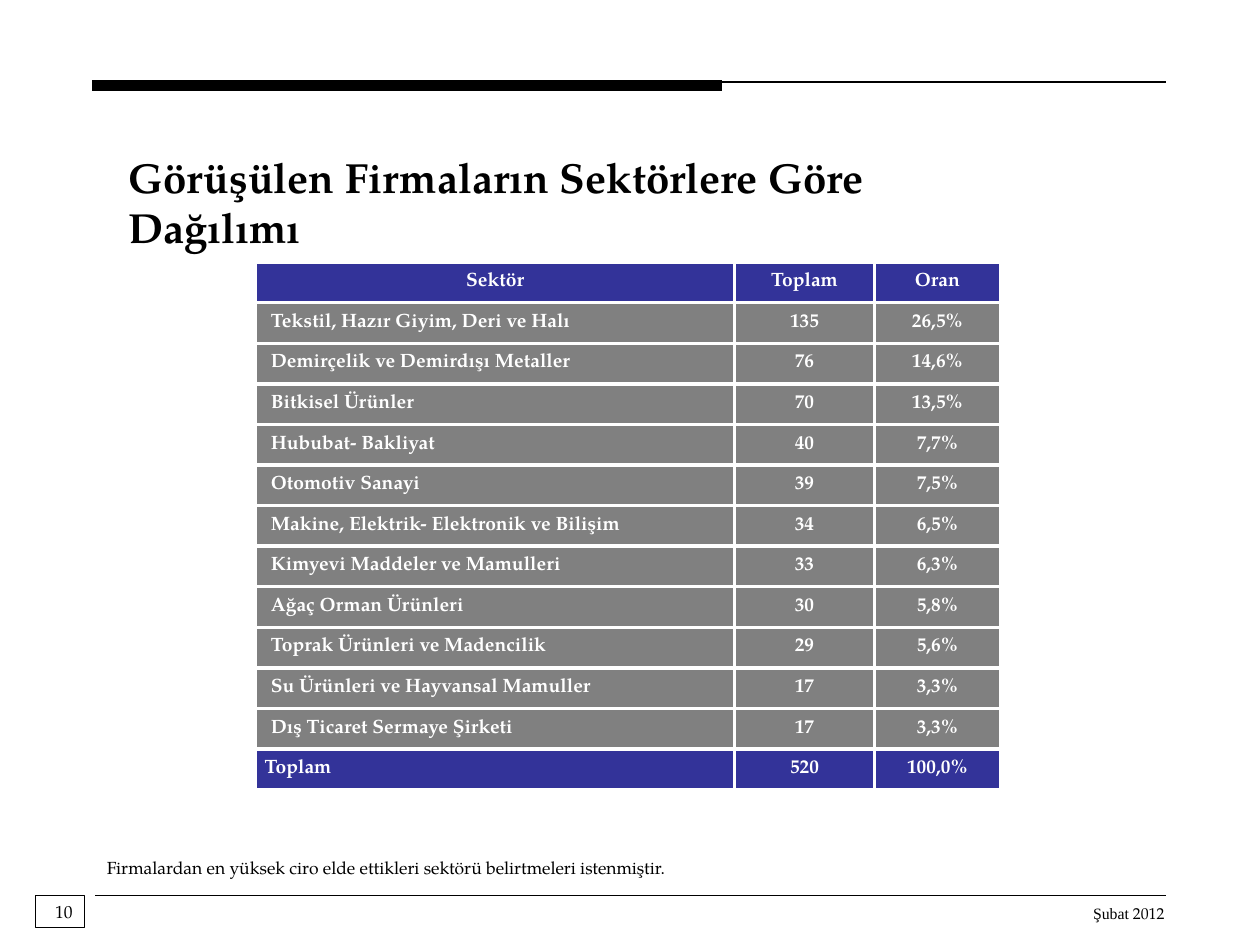
from dataclasses import dataclass

from lxml.etree import SubElement
from pptx import Presentation
from pptx.dml.color import RGBColor
from pptx.enum.shapes import MSO_CONNECTOR, MSO_SHAPE
from pptx.enum.text import MSO_ANCHOR, PP_ALIGN
from pptx.oxml.ns import qn
from pptx.util import Inches, Pt

SERIF = "TeX Gyre Pagella"
BLACK, WHITE, NAVY, GRAY = "000000", "FFFFFF", "333399", "808080"
GRID = 0.1
COLUMN_WIDTHS = (38, 11.1, 10)
TABLE_HEIGHT = 41.9
HEADER = ("Sektör", "Toplam", "Oran")
SECTORS = (
    ("Tekstil, Hazır Giyim, Deri ve Halı", "135", "26,5%"),
    ("Demirçelik ve Demirdışı Metaller", "76", "14,6%"),
    ("Bitkisel Ürünler", "70", "13,5%"),
    ("Hububat- Bakliyat", "40", "7,7%"),
    ("Otomotiv Sanayi", "39", "7,5%"),
    ("Makine, Elektrik- Elektronik ve Bilişim", "34", "6,5%"),
    ("Kimyevi Maddeler ve Mamulleri", "33", "6,3%"),
    ("Ağaç Orman Ürünleri", "30", "5,8%"),
    ("Toprak Ürünleri ve Madencilik", "29", "5,6%"),
    ("Su Ürünleri ve Hayvansal Mamuller", "17", "3,3%"),
    ("Dış Ticaret Sermaye Şirketi", "17", "3,3%"),
)
TOTAL = ("Toplam", "520", "100,0%")


@dataclass(frozen=True)
class Rule:
    """A horizontal line between two grid columns."""
    start: float
    end: float
    row: float
    weight: float


@dataclass(frozen=True)
class Caption:
    """A text with its place on the grid."""
    words: str
    column: float
    row: float
    columns: float
    rows: float
    size: float
    bold: bool = False
    wrap: bool = True
    align: PP_ALIGN = PP_ALIGN.LEFT


@dataclass(frozen=True)
class Band:
    """A table row with its fill, first column indent and alignment."""
    values: tuple
    fill: str
    indent: float = 0
    align: PP_ALIGN = PP_ALIGN.LEFT


RULES = (
    Rule(92.5, 7.5, 71.1, 0.75),
    Rule(57.3, 7.3, 6.8, 6),
    Rule(92.5, 7.5, 6.5, 0.75),
)
PAGE_NUMBER = Caption("10", 3.4, 71, 25, 4, 10)
TITLE = Caption("Görüşülen Firmaların Sektörlere Göre Dağılımı", 9.2, 11.5, 74, 9, 24, bold=True)
NOTE = Caption("Firmalardan en yüksek ciro elde ettikleri sektörü belirtmeleri istenmiştir.",
               7.5, 67.5, 46.9, 2.7, 10, wrap=False)
DATE = Caption("Şubat 2012", 85.7, 71.2, 7.7, 2.5, 9, wrap=False, align=PP_ALIGN.RIGHT)


def grid(*steps: float) -> list:
    """Turn grid steps into lengths."""
    return [Inches(step * GRID) for step in steps]


def color(code: str) -> RGBColor:
    """Turn a hex string into a colour."""
    return RGBColor.from_string(code)


def style(run, size: float, code: str, bold: bool, face: str = SERIF) -> None:
    """Format one run."""
    run.font.name, run.font.size, run.font.bold = face, Pt(size), bold
    run.font.color.rgb = color(code)


def draw_rule(slide, rule: Rule) -> None:
    """Draw a horizontal line without shadow."""
    line = slide.shapes.add_connector(
        MSO_CONNECTOR.STRAIGHT, *grid(rule.start, rule.row, rule.end, rule.row))
    line.line.color.rgb = color(BLACK)
    line.line.width = Pt(rule.weight)
    SubElement(line._element.spPr, qn("a:effectLst"))


def draw_caption(slide, caption: Caption):
    """Draw a text box and return its paragraph."""
    box = slide.shapes.add_textbox(
        *grid(caption.column, caption.row, caption.columns, caption.rows))
    box.text_frame.word_wrap = caption.wrap
    paragraph = box.text_frame.paragraphs[0]
    paragraph.text = caption.words
    paragraph.alignment = caption.align
    style(paragraph.runs[0], caption.size, BLACK, caption.bold)
    return paragraph


def draw_date(slide) -> None:
    """Draw the date with its month in a second typeface."""
    paragraph = draw_caption(slide, DATE)
    month, year = DATE.words.split()
    paragraph.runs[0].text = f"{month} "
    style(paragraph.runs[0], DATE.size, BLACK, False, "Times New Roman")
    year_run = paragraph.add_run()
    year_run.text = year
    style(year_run, DATE.size, BLACK, False)


def draw_page_frame(slide) -> None:
    """Draw the frame around the page number."""
    frame = slide.shapes.add_shape(MSO_SHAPE.RECTANGLE, *grid(2.8, 71.1, 3.9, 2.5))
    frame.shadow.inherit = False
    frame.fill.background()
    frame.line.color.rgb = color(BLACK)
    frame.line.width = Pt(0.75)


def add_borders(cell) -> None:
    """Give a cell white borders on all sides."""
    properties = cell._tc.get_or_add_tcPr()
    for place, side in enumerate(("a:lnL", "a:lnR", "a:lnT", "a:lnB")):
        border = SubElement(properties, qn(side), w=str(Pt(2.25)))
        SubElement(SubElement(border, qn("a:solidFill")), qn("a:srgbClr"), val=WHITE)
        properties.insert(place, border)


def fill_cell(cell, value: str, fill: str, indent: float, align: PP_ALIGN) -> None:
    """Write and format one table cell."""
    cell.fill.solid()
    cell.fill.fore_color.rgb = color(fill)
    add_borders(cell)
    cell.vertical_anchor = MSO_ANCHOR.MIDDLE
    cell.margin_left = Inches(indent)
    cell.margin_right = cell.margin_top = cell.margin_bottom = 0
    paragraph = cell.text_frame.paragraphs[0]
    paragraph.text = value
    paragraph.alignment = align
    style(paragraph.runs[0], 11, WHITE, True)


def draw_sector_table(slide) -> None:
    """Draw the sector table."""
    bands = [Band(HEADER, NAVY, align=PP_ALIGN.CENTER),
             *(Band(sector, GRAY, 0.12) for sector in SECTORS),
             Band(TOTAL, NAVY, 0.07)]
    table = slide.shapes.add_table(
        len(bands), len(HEADER), *grid(20.3, 20.8, sum(COLUMN_WIDTHS), TABLE_HEIGHT)).table
    table.first_row = table.horz_banding = False
    for column, width in zip(table.columns, grid(*COLUMN_WIDTHS)):
        column.width = width
    for row, band in zip(table.rows, bands):
        row.height = grid(TABLE_HEIGHT / len(bands))[0]
        sector_cell, *figure_cells = row.cells
        fill_cell(sector_cell, band.values[0], band.fill, band.indent, band.align)
        for cell, figure in zip(figure_cells, band.values[1:]):
            fill_cell(cell, figure, band.fill, 0, PP_ALIGN.CENTER)


def main() -> None:
    """Build and save the slide."""
    deck = Presentation()
    deck.slide_width, deck.slide_height = grid(100, 75)
    slide = deck.slides.add_slide(deck.slide_layouts[6])
    for rule in RULES:
        draw_rule(slide, rule)
    draw_date(slide)
    draw_page_frame(slide)
    draw_caption(slide, PAGE_NUMBER)
    draw_caption(slide, TITLE)
    draw_sector_table(slide)
    draw_caption(slide, NOTE)
    deck.save("out.pptx")


if __name__ == "__main__":
    main()
